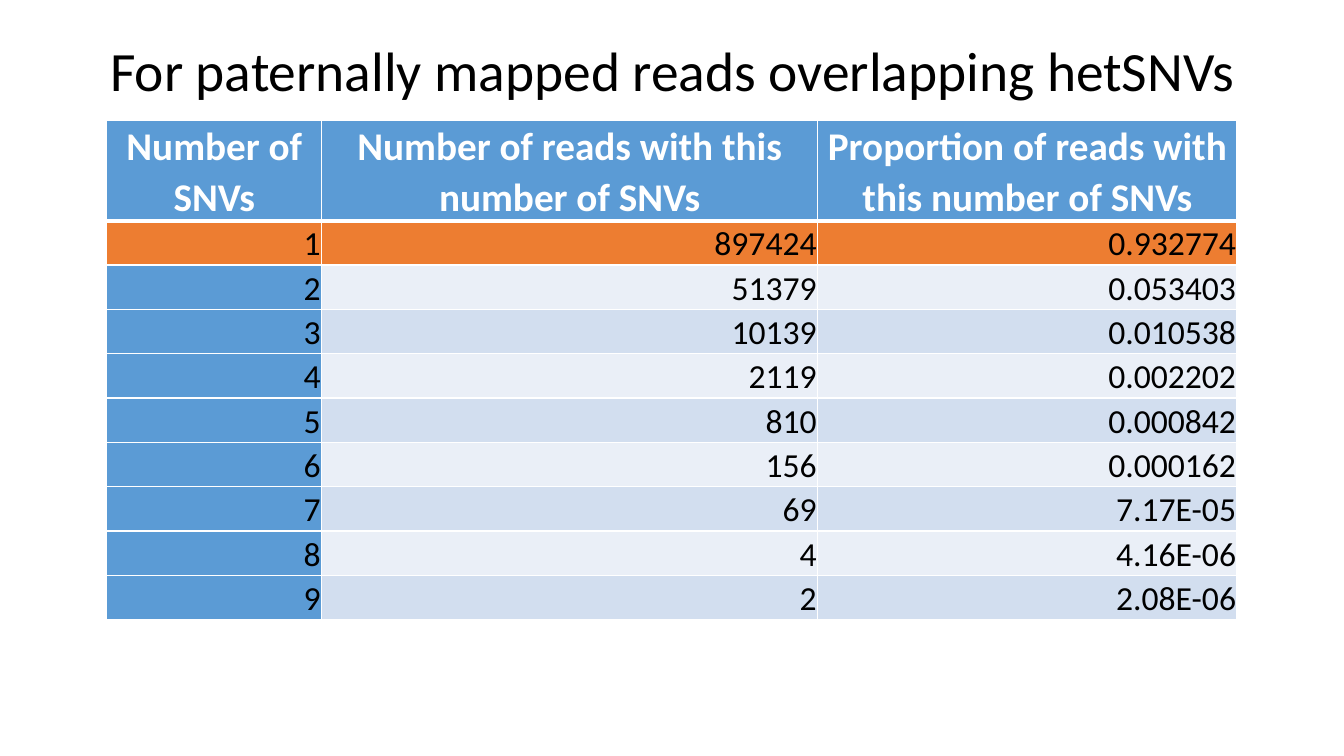
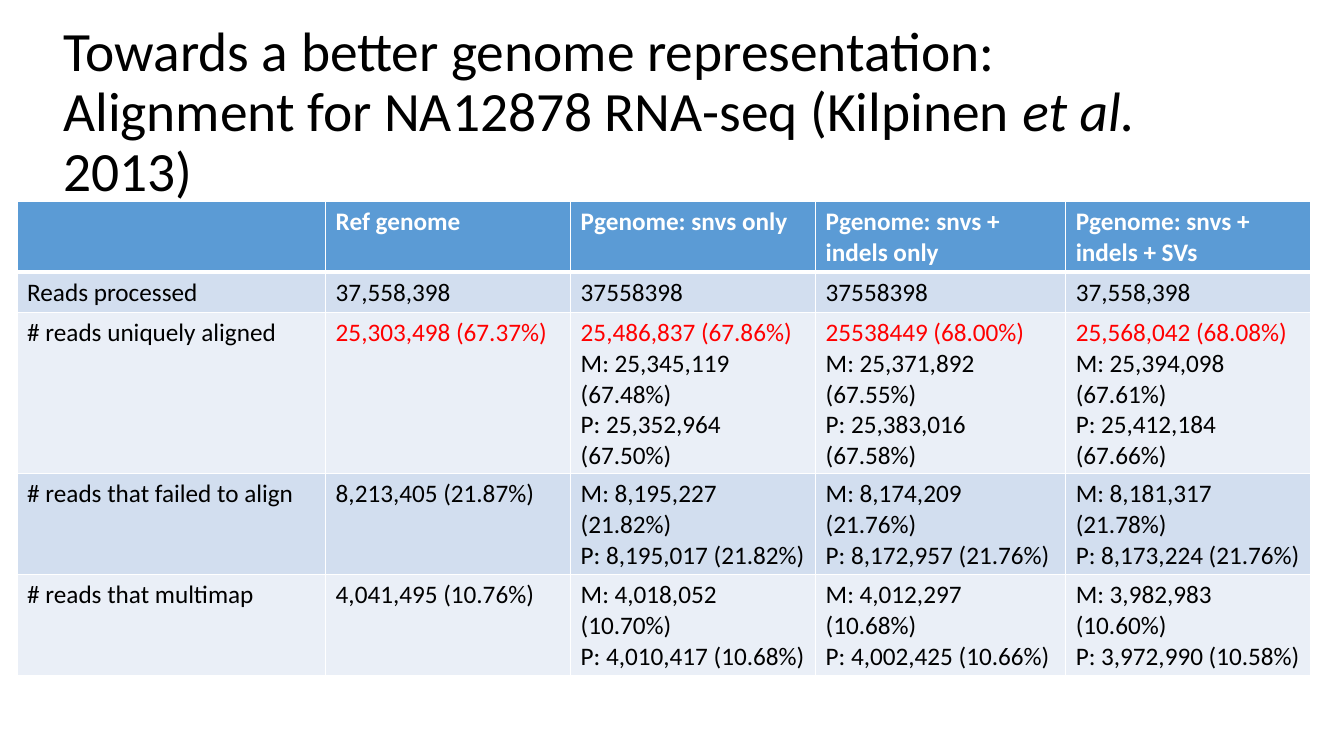
from lxml import etree
from pptx import Presentation
from pptx.dml.color import RGBColor
from pptx.enum.text import MSO_ANCHOR, PP_ALIGN
from pptx.oxml.ns import qn
from pptx.util import Inches, Pt

LEFT, CENTER, RIGHT = PP_ALIGN.LEFT, PP_ALIGN.CENTER, PP_ALIGN.RIGHT
TOP, MIDDLE, BOTTOM = MSO_ANCHOR.TOP, MSO_ANCHOR.MIDDLE, MSO_ANCHOR.BOTTOM

FONT = "Calibri"
TITLE_SIZE = 39.6
TITLE_TOP = 0.4
COLORS = {
    "text": "000000",
    "white": "FFFFFF",
    "header": "5B9BD5",
    "highlight": "ED7D31",
    "band_dark": "D2DEEF",
    "band_light": "EAEFF7",
    "red": "FF0000",
}

SNV_TITLE = [[("For paternally mapped reads overlapping hetSNVs", False)]]
SNV_ROWS = [
    ("Number of SNVs", "Number of reads with this number of SNVs",
     "Proportion of reads with this number of SNVs"),
    ("1", "897424", "0.932774"),
    ("2", "51379", "0.053403"),
    ("3", "10139", "0.010538"),
    ("4", "2119", "0.002202"),
    ("5", "810", "0.000842"),
    ("6", "156", "0.000162"),
    ("7", "69", "7.17E-05"),
    ("8", "4", "4.16E-06"),
    ("9", "2", "2.08E-06"),
]

ALIGNMENT_TITLE = [
    [("Towards a better genome representation:", False)],
    [("Alignment for NA12878 RNA-seq (Kilpinen ", False), ("et al. ", True), ("2013)", False)],
]
ALIGNMENT_ROWS = [
    ("", "Ref genome", "Pgenome: snvs only", "Pgenome: snvs + indels only",
     "Pgenome: snvs + indels + SVs"),
    ("Reads processed", "37,558,398", "37558398", "37558398", "37,558,398"),
    ("# reads uniquely aligned", "25,303,498 (67.37%)",
     "25,486,837 (67.86%)\nM: 25,345,119 (67.48%)\nP: 25,352,964 (67.50%)",
     "25538449 (68.00%)\nM: 25,371,892 (67.55%)\nP: 25,383,016 (67.58%)",
     "25,568,042 (68.08%)\nM: 25,394,098 (67.61%)\nP: 25,412,184 (67.66%)"),
    ("# reads that failed to align", "8,213,405 (21.87%)",
     "M: 8,195,227 (21.82%)\nP: 8,195,017 (21.82%)",
     "M: 8,174,209 (21.76%)\nP: 8,172,957 (21.76%)",
     "M: 8,181,317 (21.78%)\nP: 8,173,224 (21.76%)"),
    ("# reads that multimap", "4,041,495 (10.76%)",
     "M: 4,018,052 (10.70%)\nP: 4,010,417 (10.68%)",
     "M: 4,012,297 (10.68%)\nP: 4,002,425 (10.66%)",
     "M: 3,982,983 (10.60%)\nP: 3,972,990 (10.58%)"),
]
ALIGNMENT_LINES = [2, 1, 5, 3, 3]
UNIQUE_ROW = 2


def color(name):
    return RGBColor.from_string(COLORS[name])


def style_paragraph(paragraph, size, color_name, align, bold=False, spacing=None):
    paragraph.alignment = align
    if spacing:
        paragraph.line_spacing = spacing
    font = paragraph.font
    font.name, font.size, font.bold = FONT, Pt(size), bold
    font.color.rgb = color(color_name)


def add_title(slide, lines, left, width, height, align):
    box = slide.shapes.add_textbox(Inches(left), Inches(TITLE_TOP), Inches(width), Inches(height))
    frame = box.text_frame
    frame.word_wrap = True
    frame.vertical_anchor = MIDDLE
    paragraph = frame.paragraphs[0]
    for index, line in enumerate(lines):
        if index:
            paragraph.add_line_break()
        for text, italic in line:
            run = paragraph.add_run()
            run.text = text
            if italic:
                run.font.italic = True
    style_paragraph(paragraph, TITLE_SIZE, "text", align, spacing=0.9)


def set_borders(cell, top, bottom):
    properties = cell._tc.get_or_add_tcPr()
    widths = {"a:lnL": 1, "a:lnR": 1, "a:lnT": top, "a:lnB": bottom}
    for index, (tag, width) in enumerate(widths.items()):
        line = etree.Element(qn(tag), w=str(Pt(width)))
        fill = etree.SubElement(line, qn("a:solidFill"))
        etree.SubElement(fill, qn("a:srgbClr"), val=COLORS["white"])
        properties.insert(index, line)


def add_grid(slide, rows, left, top, widths, heights, style_cell):
    frame = slide.shapes.add_table(len(rows), len(widths), Inches(left), Inches(top),
                                   Inches(sum(widths)), Inches(sum(heights)))
    table = frame.table
    table.first_row = table.horz_banding = False
    for column, width in zip(table.columns, widths):
        column.width = Inches(width)
    for row_index, (row, height) in enumerate(zip(rows, heights)):
        table.rows[row_index].height = Inches(height)
        band = "header" if row_index == 0 else "band_dark" if row_index % 2 else "band_light"
        for column_index, text in enumerate(row):
            cell = table.cell(row_index, column_index)
            cell.text = text
            cell.fill.solid()
            cell.fill.fore_color.rgb = color(band)
            set_borders(cell, 3 if row_index == 1 else 1, 3 if row_index == 0 else 1)
            style_cell(cell, row_index, column_index)


def set_margins(cell, side, top):
    cell.margin_left = cell.margin_right = Inches(side)
    cell.margin_top, cell.margin_bottom = Inches(top), 0


def style_snv_cell(cell, row, column):
    paragraph = cell.text_frame.paragraphs[0]
    if row == 0:
        set_margins(cell, 0.07, 0)
        cell.vertical_anchor = BOTTOM if column else MIDDLE
        style_paragraph(paragraph, 28, "white", CENTER, bold=True, spacing=1.07)
        return
    set_margins(cell, 0.01, 0.01)
    cell.vertical_anchor = BOTTOM
    style_paragraph(paragraph, 24, "text", RIGHT)
    if row == 1:
        cell.fill.fore_color.rgb = color("highlight")
    elif column == 0:
        cell.fill.fore_color.rgb = color("header")


def style_alignment_cell(cell, row, column):
    cell.vertical_anchor = TOP
    for index, paragraph in enumerate(cell.text_frame.paragraphs):
        is_total = row == UNIQUE_ROW and column > 0 and index == 0
        name = "white" if row == 0 else "red" if is_total else "text"
        style_paragraph(paragraph, 18, name, LEFT, bold=row == 0)


def main():
    presentation = Presentation()
    presentation.slide_width, presentation.slide_height = Inches(13.33), Inches(7.5)
    blank = presentation.slide_layouts[6]

    slide = presentation.slides.add_slide(blank)
    add_title(slide, SNV_TITLE, 0.22, 12.9, 0.66, CENTER)
    add_grid(slide, SNV_ROWS, 1.06, 1.19, [2.13, 4.92, 4.16],
             [0.99] + [0.44] * (len(SNV_ROWS) - 1), style_snv_cell)

    slide = presentation.slides.add_slide(blank)
    add_title(slide, ALIGNMENT_TITLE, 0.53, 12.21, 1.45, LEFT)
    add_grid(slide, ALIGNMENT_ROWS, 0.17, 2, [3.06, 2.43, 2.43, 2.48, 2.43],
             [0.1 + 0.3 * lines for lines in ALIGNMENT_LINES], style_alignment_cell)

    presentation.save("out.pptx")


if __name__ == "__main__":
    main()
